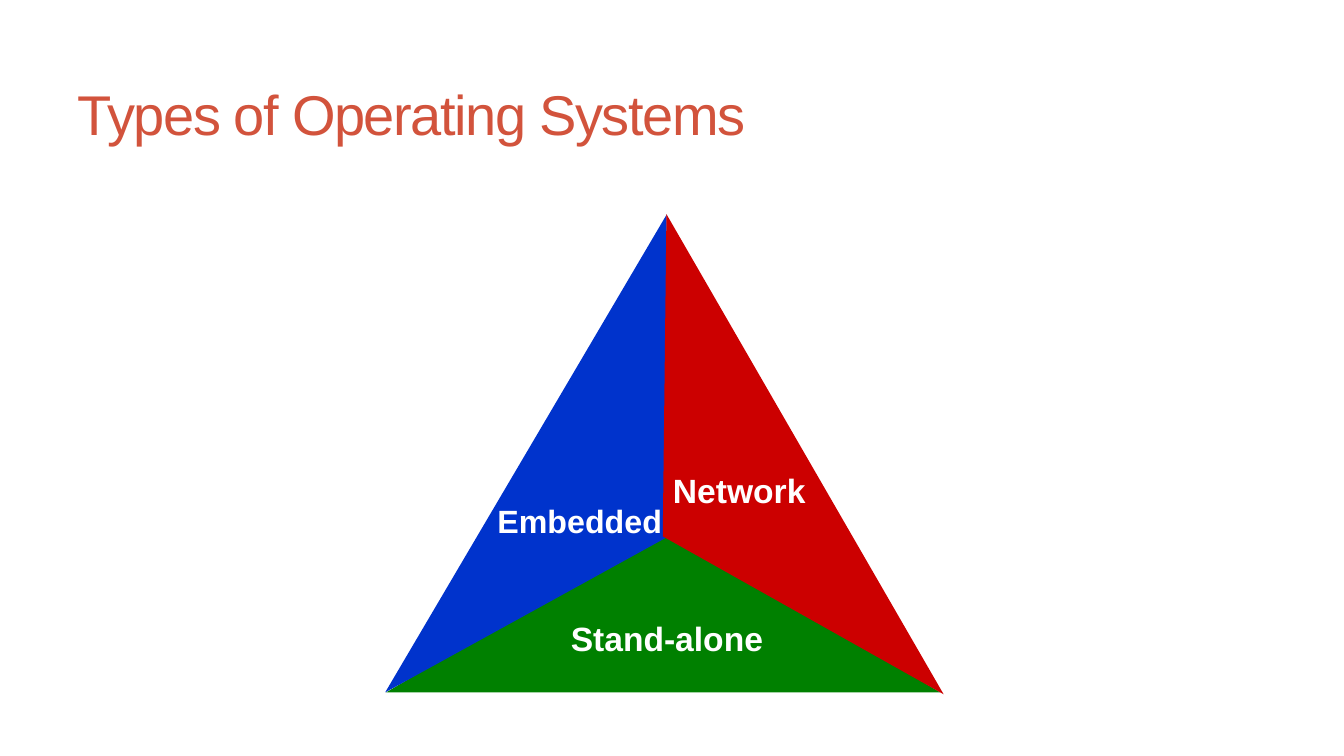
from pptx import Presentation
from pptx.dml.color import RGBColor
from pptx.enum.shapes import MSO_SHAPE
from pptx.enum.text import MSO_ANCHOR, PP_ALIGN
from pptx.util import Cm, Pt

CORAL = RGBColor(0xD2, 0x53, 0x3C)
GREEN = RGBColor(0x00, 0x80, 0x00)
BLUE = RGBColor(0x00, 0x33, 0xCC)
RED = RGBColor(0xCC, 0x00, 0x00)
WHITE = RGBColor(0xFF, 0xFF, 0xFF)

WIDTH, HEIGHT = 13.97, 4.14
PARTS = [
    ("Stand-alone", GREEN, (9.73, 13.31), 0, (14.12, 15.44, 5.36, 1.27), 24, False),
    ("Embedded", BLUE, (8.05, 10.41), 120.5, (11.89, 12.5, 5.05, 1.22), 23, True),
    ("Network", RED, (11.51, 10.41), 240, (16.69, 11.71, 3.86, 1.27), 24, False),
]


def style(font, color, **values):
    """Apply format values and a colour to a font."""
    font.color.rgb = color
    for name, value in values.items():
        setattr(font, name, value)


def add_title(slide, text):
    """Fill and place the title."""
    title = slide.shapes.title
    spots = {"left": 1.7, "top": 1.47, "width": 30.48, "height": 2.74}
    for name, value in spots.items():
        setattr(title, name, Cm(value))
    title.text_frame.vertical_anchor = MSO_ANCHOR.MIDDLE
    para = title.text_frame.paragraphs[0]
    para.alignment = PP_ALIGN.LEFT
    run = para.add_run()
    run.text = text
    style(run.font, CORAL, name="Arial", size=Pt(40))
    run.font._element.set("spc", "-100")


def add_part(slide, text, color, corner, angle, box, size, wrap):
    """Group one turned triangle with its label."""
    group = slide.shapes.add_group_shape()
    place = map(Cm, (*corner, WIDTH, HEIGHT))
    shape = group.shapes.add_shape(MSO_SHAPE.ISOSCELES_TRIANGLE, *place)
    shape.rotation = angle
    shape.shadow.inherit = False
    shape.fill.solid()
    shape.fill.fore_color.rgb = color
    shape.line.fill.background()
    frame = group.shapes.add_textbox(*map(Cm, box)).text_frame
    frame.word_wrap = wrap
    para = frame.paragraphs[0]
    para.alignment = PP_ALIGN.RIGHT
    run = para.add_run()
    run.text = text
    style(run.font, WHITE, name="Arial", size=Pt(size), bold=True)


def main():
    """Build and save the slide."""
    deck = Presentation()
    deck.slide_width, deck.slide_height = Cm(33.87), Cm(19.05)
    slide = deck.slides.add_slide(deck.slide_layouts[5])
    add_title(slide, "Types of Operating Systems")
    for part in PARTS:
        add_part(slide, *part)
    deck.save("out.pptx")


if __name__ == "__main__":
    main()
